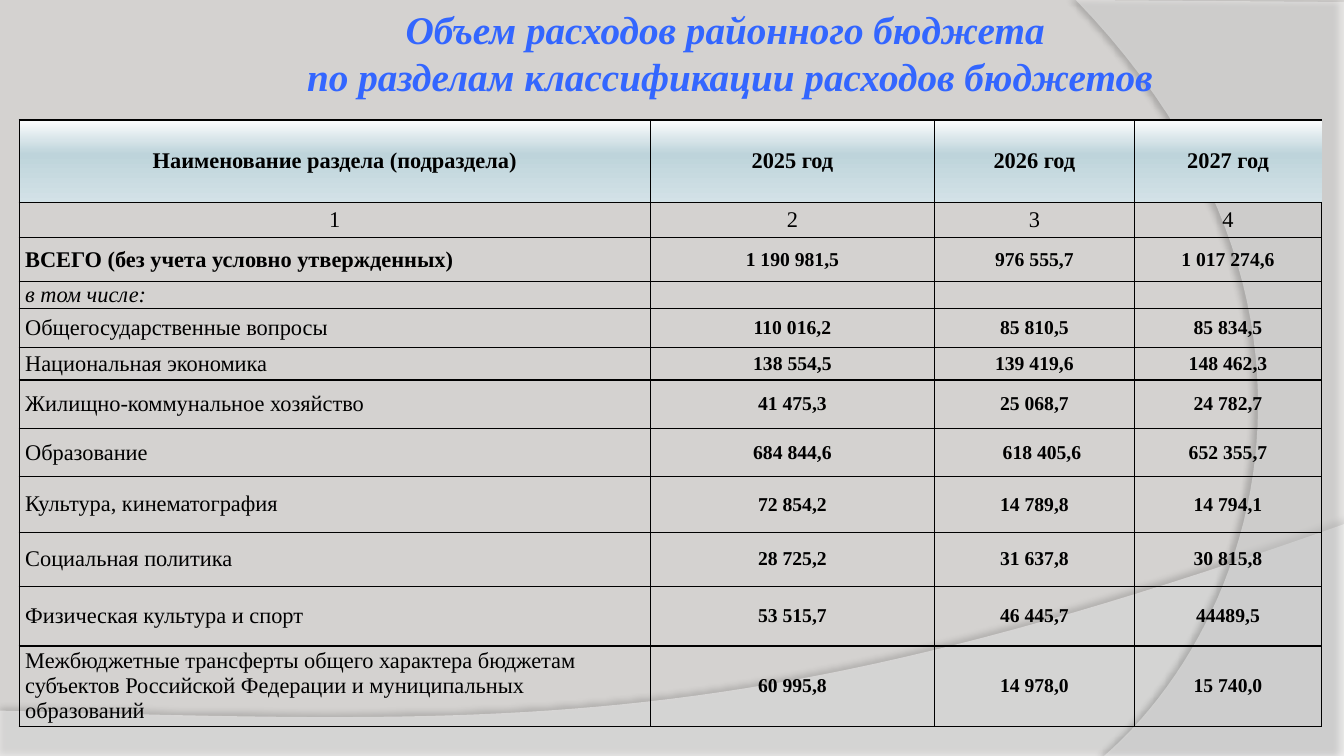
from dataclasses import dataclass

from lxml.etree import SubElement
from pptx import Presentation
from pptx.dml.color import RGBColor as RGB
from pptx.enum.text import MSO_ANCHOR as ANCHOR, PP_ALIGN as ALIGN
from pptx.oxml.ns import qn
from pptx.util import Inches, Pt


@dataclass(frozen=True)
class Theme:
    font: str = "Times New Roman"
    background: str = "D4D2D0"
    wave: str = "FFFFFF"
    ink: str = "000000"
    title: str = "3366FF"
    header: tuple = ((2, "F8FAFB"), (41, "BED4DB"), (100, "D3E2E7"))
    title_size: int = 28
    label_size: int = 16
    value_size: int = 14
    border: float = 1


def add_color(parent, color, alpha=100):
    clr = SubElement(parent, qn("a:srgbClr"), val=color)
    if alpha < 100:
        SubElement(clr, qn("a:alpha"), val=str(alpha * 1000))


def bezier(p0, p1, p2, p3, steps=48):
    """Points of a cubic curve after its start."""
    for i in range(1, steps + 1):
        t = i / steps
        u = 1 - t
        yield tuple(u**3 * a + 3 * u * u * t * b + 3 * u * t * t * c + t**3 * d
                    for a, b, c, d in zip(p0, p1, p2, p3))


class Deck:
    def __init__(self, prs, theme):
        self.theme = theme
        self.s = prs.slides.add_slide(prs.slide_layouts[6])
        fill = self.s.background.fill
        fill.solid()
        fill.fore_color.rgb = RGB.from_string(theme.background)

    def style(self, p, size, color, bold=False, italic=False):
        for r in p.runs:
            f = r.font
            f.name, f.size, f.bold, f.italic = self.theme.font, Pt(size), bold, italic
            f.color.rgb = RGB.from_string(color)

    def wave(self, points, alpha, shadow_alpha, distance, direction):
        points = [(Inches(x), Inches(y)) for x, y in points]
        builder = self.s.shapes.build_freeform(*points[0])
        builder.add_line_segments(points[1:], close=True)
        sp = builder.convert_to_shape()
        sp.line.fill.background()
        sp.fill.solid()
        sp.fill.fore_color.rgb = RGB.from_string(self.theme.wave)
        clr = sp._element.spPr.find(".//" + qn("a:solidFill"))[0]
        SubElement(clr, qn("a:alpha"), val=str(alpha * 1000))
        sp.shadow.inherit = False
        effects = sp._element.spPr.find(qn("a:effectLst"))
        shadow = SubElement(effects, qn("a:outerShdw"), blurRad=str(Pt(4)),
                            dist=str(Pt(distance)), dir=str(direction * 60000))
        add_color(shadow, self.theme.ink, shadow_alpha)

    def title(self, text, x, y, w, h):
        sp = self.s.shapes.add_textbox(Inches(x), Inches(y), Inches(w), Inches(h))
        tf = sp.text_frame
        tf.word_wrap = True
        tf.text = text
        p = tf.paragraphs[0]
        p.alignment = ALIGN.CENTER
        self.style(p, self.theme.title_size, self.theme.title, True, True)

    def borders(self, cell, open_right=False):
        tcPr = cell._tc.get_or_add_tcPr()
        for side in "LRTB":
            ln = SubElement(tcPr, qn("a:ln" + side), w=str(Pt(self.theme.border)))
            if side == "R" and open_right:
                SubElement(ln, qn("a:noFill"))
            else:
                add_color(SubElement(ln, qn("a:solidFill")), self.theme.ink)

    def header_fill(self, cell):
        grad = SubElement(cell._tc.get_or_add_tcPr(), qn("a:gradFill"))
        stops = SubElement(grad, qn("a:gsLst"))
        for pos, color in self.theme.header:
            add_color(SubElement(stops, qn("a:gs"), pos=str(pos * 1000)), color)
        SubElement(grad, qn("a:lin"), ang="5400000", scaled="0")

    def cell(self, cell, text, size, bold, italic=False, left=0, right=0,
             align=ALIGN.CENTER):
        cell.vertical_anchor = ANCHOR.MIDDLE
        cell.margin_left, cell.margin_right = Inches(left), Inches(right)
        cell.margin_top = cell.margin_bottom = 0
        p = cell.text_frame.paragraphs[0]
        p.alignment = align
        if text:
            p.text = text
            self.style(p, size, self.theme.ink, bold, italic)
        else:
            SubElement(p._p, qn("a:endParaRPr"), sz=str(size * 100))

    def table(self, rows, x, y, widths, heights):
        th = self.theme
        frame = self.s.shapes.add_table(len(rows), len(widths), Inches(x), Inches(y),
                                        Inches(sum(widths)), Inches(sum(heights)))
        table = frame.table
        for column, w in zip(table.columns, widths):
            column.width = Inches(w)
        for i, (row, h) in enumerate(zip(rows, heights)):
            table.rows[i].height = Inches(h)
            for j, text in enumerate(row):
                cell = table.cell(i, j)
                self.borders(cell, open_right=i == 0 and j == len(row) - 1)
                if i == 0:
                    self.header_fill(cell)
                else:
                    cell.fill.background()
                if i < 2:  # header and column numbers
                    self.cell(cell, text, th.label_size, i == 0)
                elif j == 0:  # section names
                    self.cell(cell, text, th.label_size, text == TOTAL,
                              text == INCLUDING, 0.06, 0.3, ALIGN.LEFT)
                else:  # amounts
                    self.cell(cell, text, th.value_size, True,
                              left=0.15 if text == "618 405,6" else 0)


TOTAL = "ВСЕГО (без учета условно утвержденных)"
INCLUDING = "в том числе:"
ROWS = [
    ("Наименование раздела (подраздела)", "2025 год", "2026 год", "2027 год"),
    ("1", "2", "3", "4"),
    (TOTAL, "1 190 981,5", "976 555,7", "1 017 274,6"),
    (INCLUDING, "", "", ""),
    ("Общегосударственные вопросы", "110 016,2", "85 810,5", "85 834,5"),
    ("Национальная экономика", "138 554,5", "139 419,6", "148 462,3"),
    ("Жилищно-коммунальное хозяйство", "41 475,3", "25 068,7", "24 782,7"),
    ("Образование", "684 844,6", "618 405,6", "652 355,7"),
    ("Культура, кинематография", "72 854,2", "14 789,8", "14 794,1"),
    ("Социальная политика", "28 725,2", "31 637,8", "30 815,8"),
    ("Физическая культура и спорт", "53 515,7", "46 445,7", "44489,5"),
    ("Межбюджетные трансферты общего характера бюджетам субъектов "
     "Российской Федерации и муниципальных образований",
     "60 995,8", "14 978,0", "15 740,0"),
]
WIDTHS = [6.26, 2.82, 1.98, 1.86]
HEIGHTS = [0.82, 0.35, 0.43, 0.27, 0.39, 0.32, 0.48, 0.48, 0.55, 0.54, 0.59, 0.8]


def main():
    prs = Presentation()
    prs.slide_width, prs.slide_height = Inches(13.33), Inches(7.5)
    deck = Deck(prs, Theme())

    # Background waves
    bottom = bezier((13.33, 5.2), (7.45, 7.29), (5.21, 7.19), (0, 7.05))
    deck.wave([(0, 7.05), (0, 7.51), (13.33, 7.51), (13.33, 5.2), *bottom],
              45, 35, 3.5, 270)
    side = bezier((10.95, 7.5), (12.46, 6.19), (13.57, 3), (10.67, 0))
    deck.wave([(13.33, 0.02), (13.33, 7.5), (10.95, 7.5), *side], 40, 45, 4, 180)

    # Title
    deck.title("Объем расходов районного бюджета \v"
               "по разделам классификации расходов бюджетов", 2.81, 0, 8.86, 1.04)

    # Budget table
    deck.table(ROWS, 0.19, 1.19, WIDTHS, HEIGHTS)

    prs.save("out.pptx")


if __name__ == "__main__":
    main()
